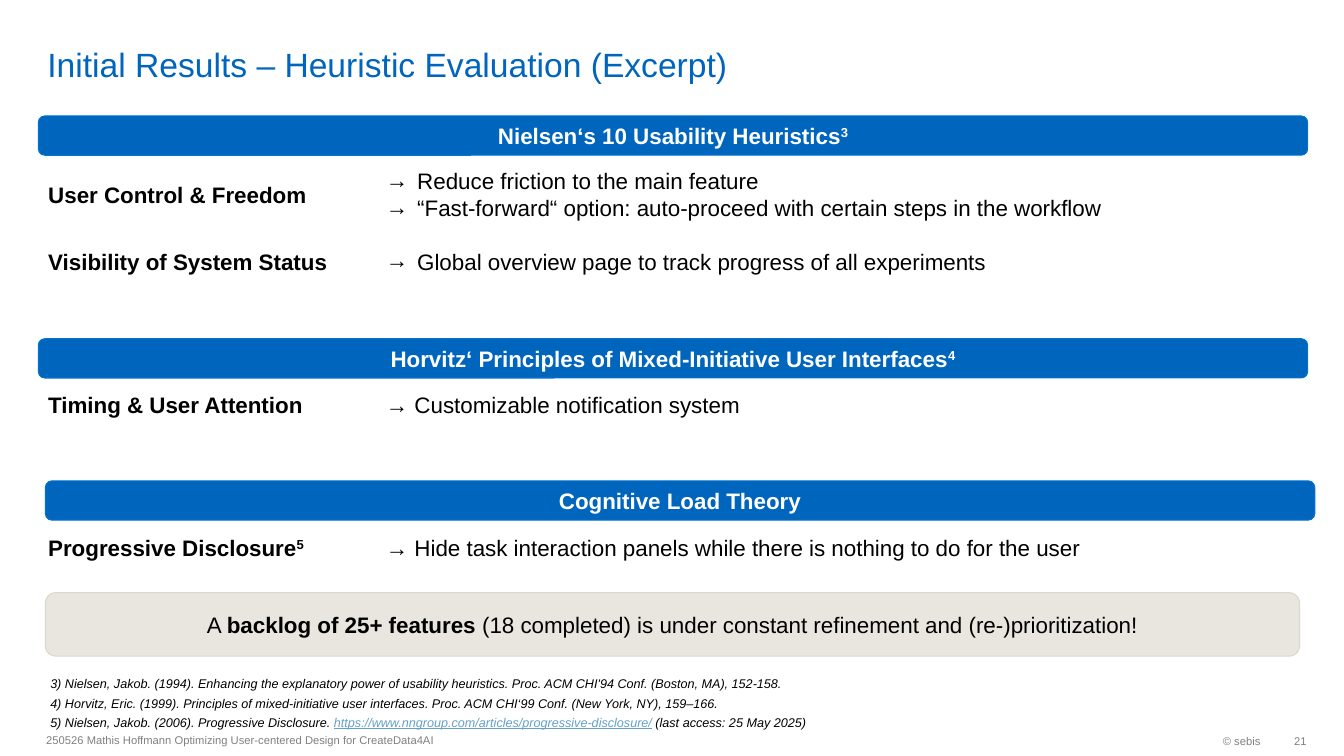
from dataclasses import dataclass

from lxml.etree import SubElement
from pptx import Presentation
from pptx.dml.color import RGBColor
from pptx.enum.shapes import MSO_SHAPE
from pptx.enum.text import MSO_ANCHOR, PP_ALIGN
from pptx.oxml.ns import qn
from pptx.util import Inches, Pt

TITLE = "Initial Results – Heuristic Evaluation (Excerpt)"

# Each paragraph is a list of (text, run format) pairs.
BOLD = {"bold": True}
SUPERSCRIPT = {"bold": True, "superscript": True}
LINK = {"color": "64A0C8", "underline": True}

# left, top, heading
BANNERS = [
    (0.38, 1.15, [("Nielsen‘s 10 Usability Heuristics", BOLD), ("3", SUPERSCRIPT)]),
    (0.38, 3.36, [("Horvitz‘ Principles of Mixed-Initiative User Interfaces", BOLD),
                  ("4", SUPERSCRIPT)]),
    (0.45, 4.77, [("Cognitive Load Theory", BOLD)]),
]

# top, label, label width, findings, findings width, bulleted
ROWS = [
    (1.61, [("User Control & Freedom", BOLD)], 2.79,
     ["Reduce friction to the main feature",
      "“Fast-forward“ option: auto-proceed with certain steps in the workflow"], 7.39, True),
    (2.41, [("Visibility of System Status", BOLD)], 3.01,
     ["Global overview page to track progress of all experiments"], 6.23, True),
    (3.83, [("Timing & User Attention", BOLD)], 2.76,
     ["→ Customizable notification system"], 3.81, False),
    (5.25, [("Progressive Disclosure", BOLD), ("5", SUPERSCRIPT)], 2.84,
     ["→ Hide task interaction panels while there is nothing to do for the user"], 7.23, False),
]

SUMMARY = [
    ("A ", {}),
    ("backlog of 25+ features ", BOLD),
    ("(18 completed) is under constant refinement and (re-)prioritization!", {}),
]

REFERENCES = [
    [("3) Nielsen, Jakob. (1994). Enhancing the explanatory power of usability heuristics. "
      "Proc. ACM CHI'94 Conf. (Boston, MA), 152-158.", {})],
    [("4) Horvitz, Eric. (1999). Principles of mixed-initiative user interfaces. "
      "Proc. ACM CHI‘99 Conf. (New York, NY), 159–166.", {})],
    [("5) Nielsen, Jakob. (2006). Progressive Disclosure. ", {}),
     ("https://www.nngroup.com/articles/progressive-disclosure/", LINK),
     (" (last access: 25 May 2025)", {})],
]

# left, top, width, text, alignment, right inset
FOOTER = [
    (0.36, 7.18, 6.3, "250526 Mathis Hoffmann Optimizing User-centered Design for CreateData4AI",
     PP_ALIGN.LEFT, 0.1),
    (10.26, 7.19, 2.34, "© sebis", PP_ALIGN.RIGHT, 0.1),
    (12.6, 7.19, 0.36, "21", PP_ALIGN.RIGHT, 0),
]


@dataclass(frozen=True)
class Theme:
    font: str = "Arial"
    blue: str = "0065BD"
    blue_line: str = "0073CF"
    sand: str = "E8E6DF"
    sand_line: str = "DAD7CB"
    black: str = "000000"
    white: str = "FFFFFF"
    gray: str = "808080"
    title_size: int = 24
    body_size: int = 16
    reference_size: int = 9
    footer_size: int = 8


THEME = Theme()
LABEL_LEFT, FINDING_LEFT = 0.38, 3.73
LINE_HEIGHT, BOX_PADDING = 0.27, 0.1
REFERENCE_TOP, REFERENCE_STEP = 6.66, 0.19


def add_arrow_bullet(paragraph):
    properties = paragraph._p.get_or_add_pPr()
    properties.set("marL", str(Inches(0.31)))
    properties.set("indent", str(-Inches(0.31)))
    SubElement(properties, qn("a:buFont"), typeface=THEME.font)
    SubElement(properties, qn("a:buChar"), char="→")


def write_text(shape, paragraphs, size=THEME.body_size, color=THEME.black, italic=False,
               align=PP_ALIGN.LEFT, anchor=MSO_ANCHOR.TOP, wrap=True, bulleted=False):
    """Fill a shape with paragraphs, each a list of (text, run format) pairs."""
    frame = shape.text_frame
    frame.word_wrap = wrap
    frame.vertical_anchor = anchor
    for index, runs in enumerate(paragraphs):
        paragraph = frame.add_paragraph() if index else frame.paragraphs[0]
        paragraph.alignment = align
        if bulleted:
            add_arrow_bullet(paragraph)
        for text, style in runs:
            run = paragraph.add_run()
            run.text = text
            run.font.name = THEME.font
            run.font.size = Pt(size)
            run.font.italic = italic
            run.font.bold = style.get("bold", False)
            run.font.underline = style.get("underline", False)
            run.font.color.rgb = RGBColor.from_string(style.get("color", color))
            if style.get("superscript"):
                run._r.get_or_add_rPr().set("baseline", "30000")


def add_text(slide, left, top, width, height, paragraphs, **text_format):
    box = slide.shapes.add_textbox(Inches(left), Inches(top), Inches(width), Inches(height))
    write_text(box, paragraphs, **text_format)
    return box


def add_bar(slide, left, top, width, height, runs, fill, line, color):
    bar = slide.shapes.add_shape(MSO_SHAPE.ROUNDED_RECTANGLE, Inches(left), Inches(top),
                                 Inches(width), Inches(height))
    bar.shadow.inherit = False
    bar.fill.solid()
    bar.fill.fore_color.rgb = RGBColor.from_string(fill)
    bar.line.color.rgb = RGBColor.from_string(line)
    bar.line.width = Pt(0.75)
    write_text(bar, [runs], color=color, align=PP_ALIGN.CENTER, anchor=MSO_ANCHOR.MIDDLE)


def add_title(slide):
    title = slide.shapes.title
    title.left, title.top = Inches(0.37), Inches(0.05)
    title.width, title.height = Inches(11.58), Inches(0.79)
    frame = title.text_frame
    frame.margin_left = frame.margin_right = Inches(0.1)
    frame.margin_top = frame.margin_bottom = 0
    write_text(title, [[(TITLE, {})]], size=THEME.title_size, color=THEME.blue,
               anchor=MSO_ANCHOR.BOTTOM)


def add_row(slide, top, label, label_width, findings, finding_width, bulleted):
    """Place the findings and centre the one-line label beside them."""
    label_height = LINE_HEIGHT + BOX_PADDING
    height = LINE_HEIGHT * len(findings) + BOX_PADDING
    add_text(slide, LABEL_LEFT, top + (height - label_height) / 2, label_width, label_height,
             [label], wrap=False)
    add_text(slide, FINDING_LEFT, top, finding_width, height,
             [[(finding, {})] for finding in findings], wrap=False, bulleted=bulleted)


def main():
    presentation = Presentation()
    presentation.slide_width, presentation.slide_height = Inches(13.33), Inches(7.5)
    slide = presentation.slides.add_slide(presentation.slide_layouts[5])

    add_title(slide)
    for left, top, heading in BANNERS:
        add_bar(slide, left, top, 12.59, 0.39, heading,
                THEME.blue, THEME.blue_line, THEME.white)
    for row in ROWS:
        add_row(slide, *row)
    add_bar(slide, 0.45, 5.88, 12.44, 0.63, SUMMARY, THEME.sand, THEME.sand_line, THEME.black)
    for index, reference in enumerate(REFERENCES):
        add_text(slide, 0.4, REFERENCE_TOP + index * REFERENCE_STEP, 12.48, 0.25, [reference],
                 size=THEME.reference_size, italic=True)
    for left, top, width, text, align, right_inset in FOOTER:
        box = add_text(slide, left, top, width, 0.32, [[(text, {})]], size=THEME.footer_size,
                       color=THEME.gray, align=align, anchor=MSO_ANCHOR.MIDDLE)
        box.text_frame.margin_right = Inches(right_inset)

    presentation.save("out.pptx")


if __name__ == "__main__":
    main()
